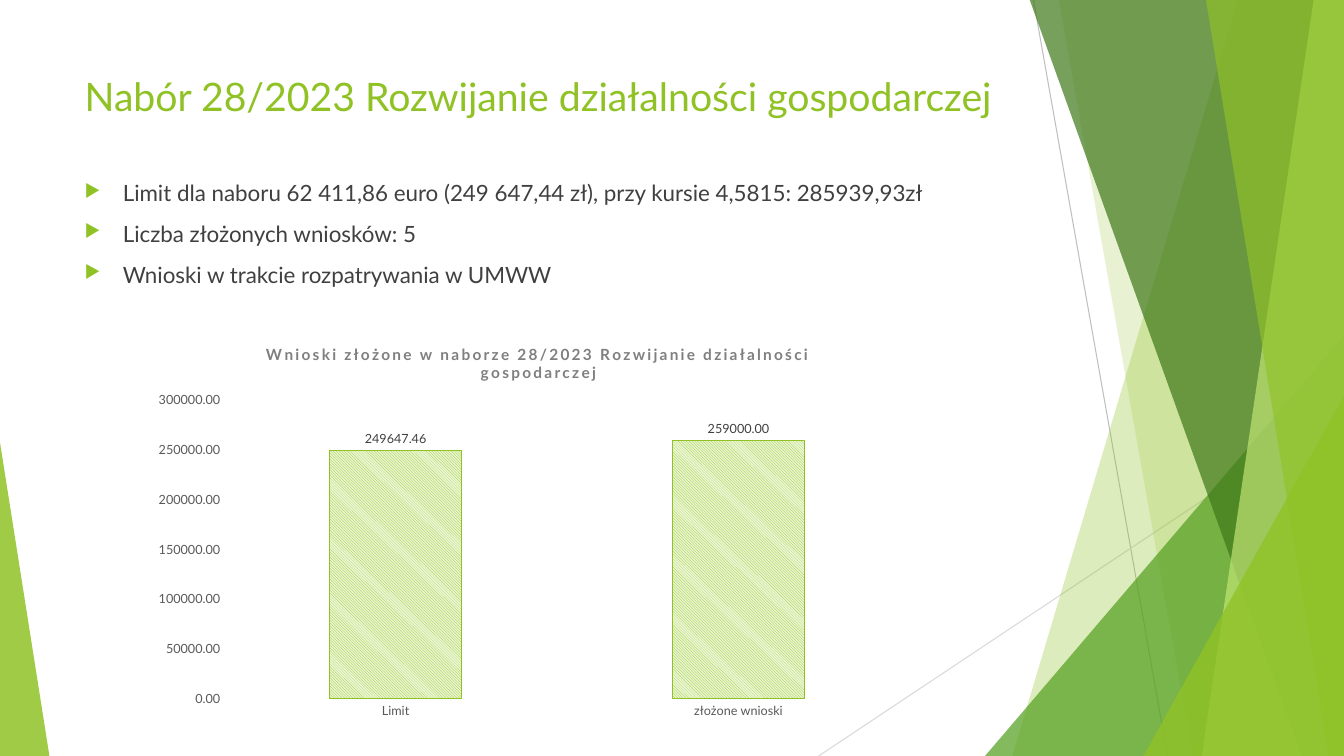
from lxml import etree
from pptx import Presentation
from pptx import util as u
from pptx.chart import data as chart_data
from pptx.dml.color import RGBColor
from pptx.enum import chart as ch, dml, shapes, text
from pptx.oxml import parse_xml
from pptx.oxml.ns import nsdecls, qn

GREEN = RGBColor(0x90, 0xC2, 0x26)
MID_GREEN = RGBColor(0x54, 0xA0, 0x21)
DARK_GREEN = RGBColor(0x3F, 0x78, 0x19)
LIGHT_GREEN = RGBColor(0xC0, 0xE4, 0x74)
PALE_GREEN = RGBColor(0xEA, 0xF6, 0xD1)
LINE_GREY = RGBColor(0xBF, 0xBF, 0xBF)
LIGHT_GREY = RGBColor(0xD9, 0xD9, 0xD9)
TEXT_GREY = RGBColor(0x40, 0x40, 0x40)
AXIS_GREY = RGBColor(0x59, 0x59, 0x59)
TITLE_GREY = RGBColor(0x7F, 0x7F, 0x7F)
BLACK = RGBColor(0, 0, 0)

FONT = "Lato"
WIDTH, HEIGHT, TOP = 13.33, 7.5, -0.01
TITLE = "Nabór 28/2023 Rozwijanie działalności gospodarczej"
CHART_TITLE = "Wnioski złożone w naborze 28/2023 Rozwijanie działalności gospodarczej"
BULLETS = (
    "Limit dla naboru 62 411,86 euro (249 647,44 zł), przy kursie 4,5815: 285939,93zł",
    "Liczba złożonych wniosków: 5",
    "Wnioski w trakcie rozpatrywania w UMWW",
)


def set_all(target, **values):
    for name, value in values.items():
        setattr(target, name, value)


def set_font(font, size, color, bold=False):
    set_all(font, name=FONT, size=u.Pt(size), bold=bold)
    font.color.rgb = color


def inches(*lengths):
    return [u.Inches(length) for length in lengths]


def place(shape, *box):
    set_all(shape, **dict(zip(("left", "top", "width", "height"), inches(*box))))


def paint(shape, color, opacity):
    shape.shadow.inherit = False
    shape.line.fill.background()
    shape.fill.solid()
    shape.fill.fore_color.rgb = color
    color_tag = shape.fill._xPr.find(".//" + qn("a:srgbClr"))
    etree.SubElement(color_tag, qn("a:alpha"), val=str(opacity * 1000))


def add_line(page, color, *ends):
    line = page.shapes.add_connector(shapes.MSO_CONNECTOR.STRAIGHT, *inches(*ends))
    line.line.color.rgb = color
    line.line.width = u.Pt(0.75)
    etree.SubElement(line._element.spPr, qn("a:effectLst"))


def add_band(page, top_left, bottom_left, color, opacity):
    """Draw a band that runs from a slanted left edge to the slide's right edge."""
    builder = page.shapes.build_freeform(*inches(top_left, TOP), scale=1.0)
    corners = [(WIDTH, TOP), (WIDTH, HEIGHT), (bottom_left, HEIGHT)]
    builder.add_line_segments([inches(*corner) for corner in corners], close=True)
    paint(builder.convert_to_shape(), color, opacity)


def add_triangle(page, left, top, width, peak, color, opacity):
    triangle = page.shapes.add_shape(
        shapes.MSO_SHAPE.ISOSCELES_TRIANGLE, *inches(left, top, width, HEIGHT - top))
    triangle.adjustments[0] = peak
    paint(triangle, color, opacity)


def add_decoration(page):
    add_line(page, LINE_GREY, 10.25, 0, 11.58, HEIGHT)
    add_line(page, LIGHT_GREY, WIDTH, 4.03, 8.12, HEIGHT)
    add_band(page, 12.28, 10.04, GREEN, 30)
    add_band(page, 10.5, 11.83, GREEN, 20)
    add_triangle(page, 9.77, 3.33, 3.56, 1, MID_GREEN, 72)
    add_band(page, 10.21, 12.91, DARK_GREEN, 70)
    add_band(page, 13.03, 11.92, LIGHT_GREEN, 70)
    add_band(page, 11.96, 13.18, GREEN, 65)
    add_triangle(page, 11.34, 3.93, 1.99, 1, GREEN, 80)
    add_triangle(page, 0, 4.39, 0.49, 0, GREEN, 85)


def write(para, words, size, color):
    para.alignment = text.PP_ALIGN.LEFT
    span = para.add_run()
    span.text = words
    set_font(span.font, size, color)


def add_title(page):
    title = page.shapes.title
    place(title, 0.74, 0.67, 9.44, 0.7)
    set_all(title.text_frame, word_wrap=True, auto_size=text.MSO_AUTO_SIZE.NONE,
            vertical_anchor=text.MSO_ANCHOR.TOP)
    write(title.text_frame.paragraphs[0], TITLE, 28, GREEN)


def add_bullets(page):
    frame = page.shapes.add_textbox(*inches(0.74, 1.73, 9.74, 5.31)).text_frame
    frame.word_wrap = True
    for index, words in enumerate(BULLETS):
        para = frame.add_paragraph() if index else frame.paragraphs[0]
        para.space_before = u.Pt(10)
        write(para, words, 16, TEXT_GREY)
        properties = para._p.get_or_add_pPr()
        indent = u.Inches(0.38)
        properties.set("marL", str(indent))
        properties.set("indent", str(-indent))
        color = etree.SubElement(properties, qn("a:buClr"))
        etree.SubElement(color, qn("a:srgbClr"), val=str(GREEN))
        etree.SubElement(properties, qn("a:buSzPct"), val="80000")
        etree.SubElement(properties, qn("a:buChar"), char="▶")


def layout_xml(**values):
    parts = "".join(f'<c:{name} val="{value}"/>' for name, value in values.items())
    return parse_xml(f'<c:layout {nsdecls("c")}><c:manualLayout>{parts}'
                     '</c:manualLayout></c:layout>')


def set_layout(parent, layout, position):
    for old in parent.findall(qn("c:layout")):
        parent.remove(old)
    parent.insert(position, layout)


def style_axis(axis):
    set_all(axis, has_major_gridlines=False, major_tick_mark=ch.XL_TICK_MARK.NONE,
            minor_tick_mark=ch.XL_TICK_MARK.NONE)
    axis.format.line.fill.background()
    set_font(axis.tick_labels.font, 9, AXIS_GREY)


def style_series(plot):
    set_all(plot, gap_width=160, vary_by_categories=False, has_data_labels=True)
    set_all(plot.data_labels, show_value=True, number_format="0.00",
            number_format_is_linked=False, position=ch.XL_LABEL_POSITION.OUTSIDE_END)
    set_font(plot.data_labels.font, 9, TEXT_GREY)
    look = plot.series[0].format
    look.fill.patterned()
    look.fill.pattern = dml.MSO_PATTERN.LIGHT_DOWNWARD_DIAGONAL
    look.fill.fore_color.rgb = GREEN
    look.fill.back_color.rgb = PALE_GREEN
    look.line.color.rgb = GREEN
    look.line.width = u.Pt(0.75)


def add_applications_chart(page):
    values = chart_data.CategoryChartData(number_format="0.00")
    values.categories = ["Limit", "złożone wnioski"]
    values.add_series("Series 1", (249647.46, 259000))
    chart = page.shapes.add_chart(ch.XL_CHART_TYPE.COLUMN_CLUSTERED,
                                  *inches(1.45, 3.21, 7.73, 4), values).chart
    set_font(chart.font, 10, BLACK)
    set_all(chart, has_legend=False, has_title=True)
    para = chart.chart_title.text_frame.paragraphs[0]
    span = para.add_run()
    span.text = CHART_TITLE
    set_font(span.font, 11, TITLE_GREY, bold=True)
    span._r.get_or_add_rPr().set("spc", "150")
    set_layout(chart.chart_title._element,
               layout_xml(xMode="edge", yMode="edge", x=0.15, y=0.04), 1)
    plot_area = chart._chartSpace.chart.plotArea
    set_layout(plot_area, layout_xml(layoutTarget="inner", xMode="edge", yMode="edge",
                                     x=0.1, y=0.19, w=0.88, h=0.74), 0)
    style_axis(chart.category_axis)
    style_axis(chart.value_axis)
    set_all(chart.value_axis, minimum_scale=0, maximum_scale=300000, major_unit=50000)
    set_all(chart.value_axis.tick_labels, number_format="0.00",
            number_format_is_linked=False)
    style_series(chart.plots[0])


def main():
    deck = Presentation()
    set_all(deck, slide_width=u.Inches(WIDTH), slide_height=u.Inches(HEIGHT))
    page = deck.slides.add_slide(deck.slide_layouts.get_by_name("Title Only"))
    add_decoration(page)
    add_title(page)
    add_bullets(page)
    add_applications_chart(page)
    deck.save("out.pptx")


if __name__ == "__main__":
    main()
